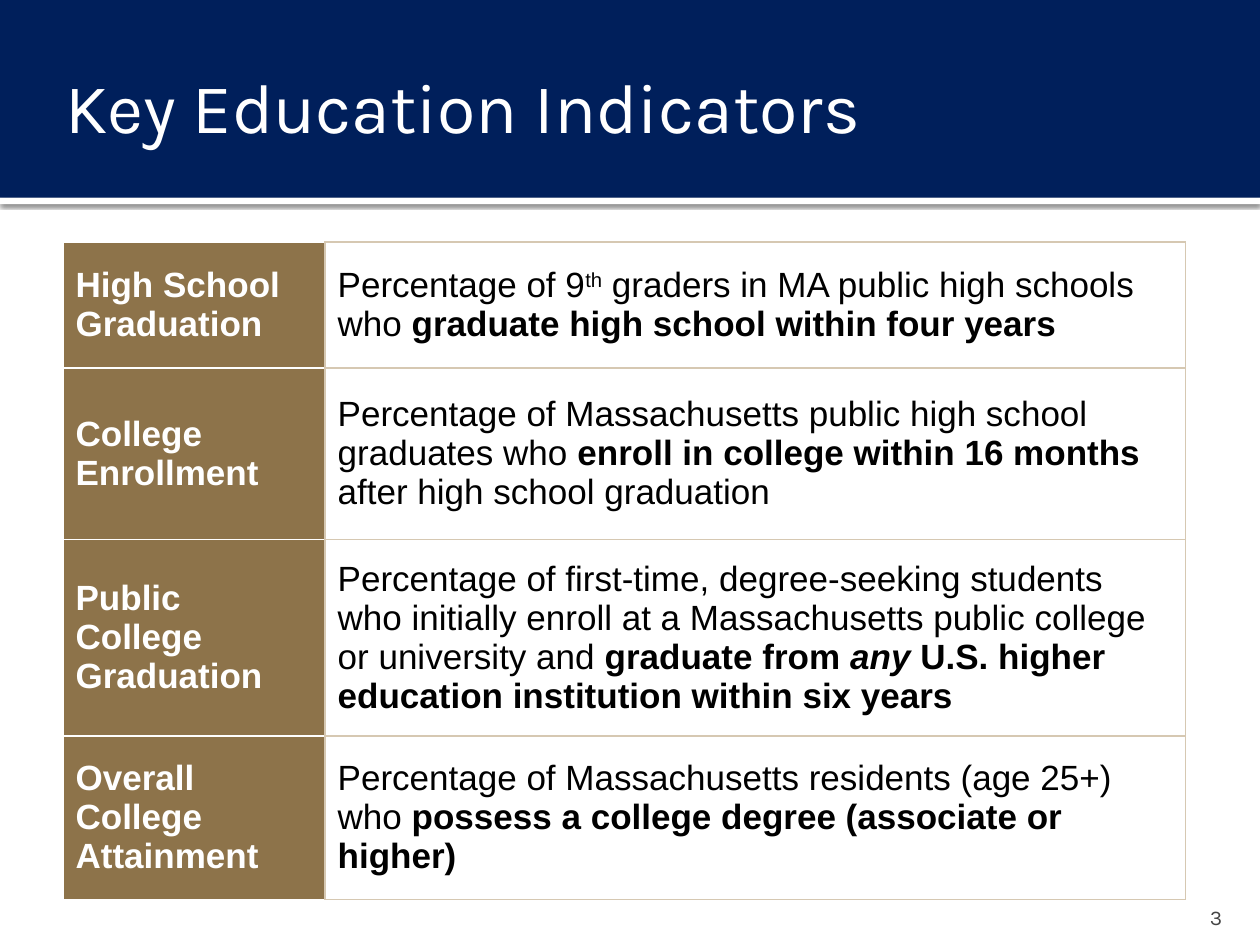
"""Build the Key Education Indicators slide."""
from lxml.etree import SubElement
from pptx import Presentation
from pptx.dml.color import RGBColor
from pptx.enum.shapes import MSO_SHAPE
from pptx.enum.text import MSO_ANCHOR, PP_ALIGN
from pptx.oxml import parse_xml
from pptx.oxml.ns import nsdecls, qn
from pptx.util import Inches, Pt

NAVY = RGBColor(0x00, 0x1F, 0x5B)
BROWN = RGBColor(0x8D, 0x73, 0x4A)
TAN = RGBColor(0xD6, 0xC8, 0xB2)
GRAY = RGBColor(0x45, 0x45, 0x45)
WHITE = RGBColor(0xFF, 0xFF, 0xFF)
BLACK = RGBColor(0x00, 0x00, 0x00)

BOLD = {"bold": True}
BOLD_ITALIC = {"bold": True, "italic": True}
SUPER = {"baseline": "30000"}

INDICATORS = [
    ("High School Graduation", 1, [
        ("Percentage of 9", {}), ("th", SUPER),
        (" graders in MA public high schools who ", {}),
        ("graduate high school within four years", BOLD)]),
    ("College Enrollment", 1.36, [
        ("Percentage of Massachusetts public high school graduates who ", {}),
        ("enroll in college within 16 months ", BOLD),
        ("after high school graduation", {})]),
    ("Public College Graduation", 1.56, [
        ("Percentage of first-time, degree-seeking students who initially "
         "enroll at a Massachusetts public college or university and ", {}),
        ("graduate from ", BOLD), ("any", BOLD_ITALIC),
        (" U.S. higher education institution within six years", BOLD)]),
    ("Overall College Attainment", 1.3, [
        ("Percentage of Massachusetts residents (age 25+) who ", {}),
        ("possess a college degree (associate or higher)", BOLD)]),
]
COLUMNS = [2.08, 6.83]

TEXTS = [
    ("Key Education Indicators", (0.42, 0.17, 9.17, 1.33), 40, WHITE,
     PP_ALIGN.LEFT, {"vertical_anchor": MSO_ANCHOR.MIDDLE, "margin_right": Inches(0.05)}),
    ("3", (9, 7.08, 0.8, 0.3), 12, GRAY,
     PP_ALIGN.RIGHT, {"vertical_anchor": MSO_ANCHOR.BOTTOM, "margin_bottom": 0}),
]


def add_run(p, text, size, font, color, style):
    r = p.add_run()
    r.text = text
    r.font.color.rgb = color
    for name, value in {"size": Pt(size), "name": font, **style}.items():
        if name == "baseline":
            r.font._element.set(name, value)
        else:
            setattr(r.font, name, value)


def add_bar(s, box, color):
    sp = s.shapes.add_shape(MSO_SHAPE.RECTANGLE, *map(Inches, box))
    sp.shadow.inherit = False
    sp.fill.solid()
    sp.fill.fore_color.rgb = color
    sp.line.fill.background()
    return sp


def add_shadow(sp):
    effects = sp._element.spPr.find(qn("a:effectLst"))
    shadow = SubElement(effects, qn("a:outerShdw"), blurRad=str(Pt(2.5)),
                        dist=str(Pt(0.8)), dir="5400000", rotWithShape="0")
    color = SubElement(shadow, qn("a:srgbClr"), val="000000")
    SubElement(color, qn("a:alpha"), val="60000")


def fill_cell(cell, runs, color, fill, border):
    cell.vertical_anchor = MSO_ANCHOR.MIDDLE
    cell.fill.solid()
    cell.fill.fore_color.rgb = fill
    for text, style in runs:
        add_run(cell.text_frame.paragraphs[0], text, 20, "Arial", color, style)
    for i, side in enumerate("LRTB"):
        line = parse_xml(
            f'<a:ln{side} {nsdecls("a")} w="{Pt(1)}"><a:solidFill>'
            f'<a:srgbClr val="{border}"/></a:solidFill></a:ln{side}>')
        cell._tc.get_or_add_tcPr().insert(i, line)


def main():
    prs = Presentation()
    prs.slide_width, prs.slide_height = Inches(10), Inches(7.5)
    s = prs.slides.add_slide(prs.slide_layouts[6])

    add_shadow(add_bar(s, (0, 1.57, 10, 0.05), WHITE))
    add_bar(s, (0, 0, 10, 1.57), NAVY)

    for text, box, size, color, align, frame in TEXTS:
        tf = s.shapes.add_textbox(*map(Inches, box)).text_frame
        for name, value in {"word_wrap": True, **frame}.items():
            setattr(tf, name, value)
        p = tf.paragraphs[0]
        p.alignment = align
        add_run(p, text, size, "Karla", color, {})

    height = sum(row[1] for row in INDICATORS)
    table = s.shapes.add_table(
        len(INDICATORS), len(COLUMNS), Inches(0.5), Inches(1.92),
        Inches(sum(COLUMNS)), Inches(height)).table
    table.first_row = table.horz_banding = False
    for column, width in zip(table.columns, COLUMNS):
        column.width = Inches(width)
    for i, (label, row_height, runs) in enumerate(INDICATORS):
        table.rows[i].height = Inches(row_height)
        fill_cell(table.cell(i, 0), [(label, BOLD)], WHITE, BROWN, WHITE)
        fill_cell(table.cell(i, 1), runs, BLACK, WHITE, TAN)

    prs.save("out.pptx")


if __name__ == "__main__":
    main()
